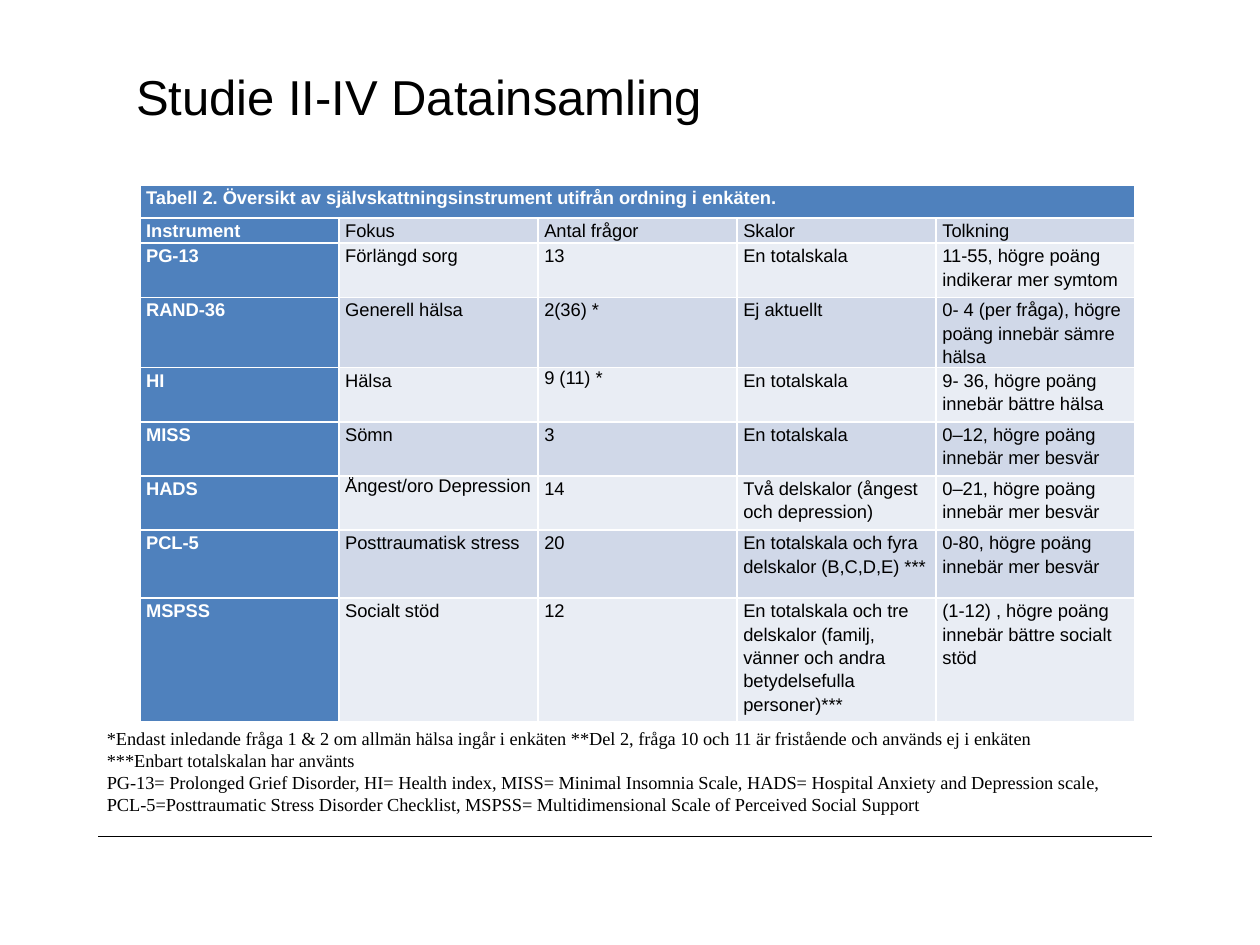
from lxml import etree
from pptx import Presentation
from pptx.dml.color import RGBColor
from pptx.enum import shapes, text
from pptx.oxml import ns
from pptx.util import Inches, Pt

THEME = {
    "ink": "000000", "white": "FFFFFF", "accent": "4F81BD",
    "bands": ("E9EDF4", "D0D8E8"),
    "sans": "Arial", "serif": "Times New Roman",
    "title_size": 28, "body_size": 10.5,
}

TITLE = "Studie II-IV Datainsamling"
CAPTION = "Tabell 2. Översikt av självskattningsinstrument utifrån ordning i enkäten."
INSTRUMENTS = [
    ("Instrument", "Fokus", "Antal frågor", "Skalor", "Tolkning"),
    ("PG-13", "Förlängd sorg", "13", "En totalskala",
     "11-55, högre poäng indikerar mer symtom"),
    ("RAND-36", "Generell hälsa", "2(36) *", "Ej aktuellt",
     "0- 4 (per fråga), högre poäng innebär sämre hälsa"),
    ("HI", "Hälsa", "9 (11) *", "En totalskala",
     "9- 36, högre poäng innebär bättre hälsa"),
    ("MISS", "Sömn", "3", "En totalskala",
     "0–12, högre poäng innebär mer besvär"),
    ("HADS", "Ångest/oro Depression", "14", "Två delskalor (ångest och depression)",
     "0–21, högre poäng innebär mer besvär"),
    ("PCL-5", "Posttraumatisk stress", "20",
     "En totalskala och fyra delskalor (B,C,D,E) ***",
     "0-80, högre poäng innebär mer besvär"),
    ("MSPSS", "Socialt stöd", "12",
     "En totalskala och tre delskalor (familj, vänner och andra betydelsefulla personer)***",
     "(1-12) , högre poäng innebär bättre socialt stöd"),
]
SINGLE_SPACED = {"9 (11) *", "Ångest/oro Depression"}
ROW_HEIGHTS = (0.26, 0.2, 0.43, 0.54, 0.43, 0.43, 0.43, 0.54, 0.98)
COLUMN_WIDTH = 1.58
NOTES = [
    "*Endast inledande fråga 1 & 2 om allmän hälsa ingår i enkäten **Del 2, fråga 10 "
    "och 11 är fristående och används ej i enkäten",
    "***Enbart totalskalan har använts",
    "PG-13= Prolonged Grief Disorder, HI= Health index, MISS= Minimal Insomnia Scale, "
    "HADS= Hospital Anxiety and Depression scale, PCL-5=Posttraumatic Stress Disorder "
    "Checklist, MSPSS= Multidimensional Scale of Perceived Social Support",
]


def write(frame, lines, size=THEME["body_size"], font=THEME["sans"],
          color=THEME["ink"], bold=False, spacing=None):
    """Fill a text frame with one paragraph per line."""
    frame.word_wrap = True
    frame.text = "\n".join(lines)
    for paragraph in frame.paragraphs:
        paragraph.alignment = text.PP_ALIGN.LEFT
        if spacing:
            paragraph.line_spacing = spacing
        for run in paragraph.runs:
            run.font.size = Pt(size)
            run.font.name = font
            run.font.bold = bold
            run.font.color.rgb = RGBColor.from_string(color)


def fill_cell(cell, content, fill, **text_format):
    cell.margin_left = cell.margin_right = Inches(0.05)
    cell.margin_top = cell.margin_bottom = 0
    cell.fill.solid()
    cell.fill.fore_color.rgb = RGBColor.from_string(fill)
    write(cell.text_frame, [content], **text_format)


def add_title(slide):
    title = slide.shapes.title
    title.left, title.top = Inches(0.98), Inches(0.48)
    title.width, title.height = Inches(5.74), Inches(0.57)
    title.text_frame.vertical_anchor = text.MSO_ANCHOR.TOP
    title.text_frame.auto_size = text.MSO_AUTO_SIZE.NONE
    write(title.text_frame, [TITLE], size=THEME["title_size"])


def add_instrument_table(slide):
    columns = len(INSTRUMENTS[0])
    table = slide.shapes.add_table(
        len(ROW_HEIGHTS), columns, Inches(1.11), Inches(1.47),
        Inches(COLUMN_WIDTH * columns), Inches(sum(ROW_HEIGHTS))).table
    table.first_col = True
    for column in table.columns:
        column.width = Inches(COLUMN_WIDTH)
    for row, height in zip(table.rows, ROW_HEIGHTS):
        row.height = Inches(height)

    heading = {"fill": THEME["accent"], "color": THEME["white"],
               "bold": True, "spacing": 1.15}
    table.cell(0, 0).merge(table.cell(0, columns - 1))
    fill_cell(table.cell(0, 0), CAPTION, **heading)
    for row, values in enumerate(INSTRUMENTS, start=1):
        fill_cell(table.cell(row, 0), values[0], **heading)
        for column, value in enumerate(values[1:], start=1):
            fill_cell(table.cell(row, column), value, THEME["bands"][row % 2],
                      spacing=None if value in SINGLE_SPACED else 1.15)


def add_notes_text(slide):
    box = slide.shapes.add_textbox(Inches(0.75), Inches(5.72), Inches(8.27), Inches(1.29))
    write(box.text_frame, NOTES, font=THEME["serif"])


def add_footer_rule(slide):
    rule = slide.shapes.add_connector(
        shapes.MSO_CONNECTOR.STRAIGHT, Inches(0.78), Inches(6.64), Inches(9.14), Inches(6.64))
    rule.line.color.rgb = RGBColor.from_string(THEME["ink"])
    rule.line.width = Pt(0.5)
    etree.SubElement(rule._element.spPr, ns.qn("a:effectLst"))


def main():
    presentation = Presentation()
    presentation.slide_width, presentation.slide_height = Inches(10), Inches(7.5)
    slide = presentation.slides.add_slide(presentation.slide_layouts[5])
    add_footer_rule(slide)
    add_instrument_table(slide)
    add_notes_text(slide)
    add_title(slide)
    presentation.save("out.pptx")


if __name__ == "__main__":
    main()
